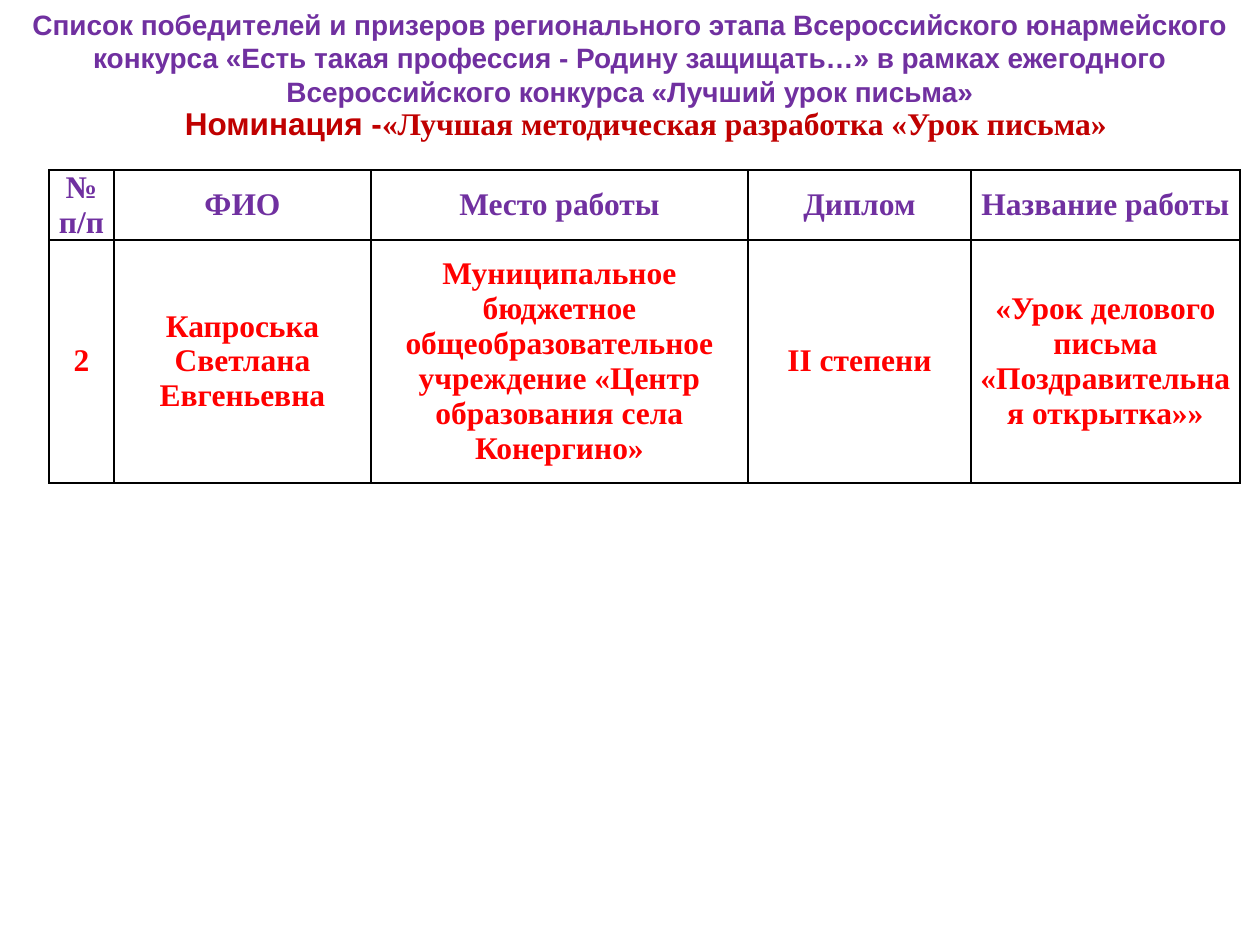
"""Builds a slide with the contest winners table and its headings."""
from dataclasses import dataclass

from lxml.etree import SubElement
from pptx import Presentation
from pptx.dml.color import RGBColor
from pptx.enum.shapes import MSO_SHAPE as Shape
from pptx.enum.text import MSO_ANCHOR as Anchor, MSO_AUTO_SIZE as AutoSize, PP_ALIGN as Align
from pptx.oxml.ns import qn
from pptx.util import Pt

PX = 914400 // 126


@dataclass(frozen=True)
class Theme:
    sans: str = "Arial"
    serif: str = "Times New Roman"
    purple: str = "7030A0"
    crimson: str = "C00000"
    red: str = "FF0000"
    white: str = "FFFFFF"
    black: str = "000000"
    title_size: int = 16
    body_size: int = 18


THEME = Theme()

SLIDE_SIZE = (1260, 945)
TITLE = (
    "Список победителей и призеров регионального этапа Всероссийского юнармейского "
    "конкурса «Есть такая профессия - Родину защищать…» в рамках ежегодного "
    "Всероссийского конкурса «Лучший урок письма»"
)
TITLE_BOX = (0, 0, 1260, 115)
NOMINATION = [
    ("Номинация -", THEME.sans),
    ("«Лучшая методическая разработка «Урок письма»", THEME.serif),
]
NOMINATION_BOX = (167, 98, 958, 50)
TABLE_ORIGIN = (49, 170)
COLUMN_WIDTHS = [65, 257, 377, 223, 269]
ROW_HEIGHTS = [60, 243]
CELL_MARGIN = 9
ROWS = [
    ["№\nп/п", "ФИО", "Место работы", "Диплом", "Название работы"],
    [
        "2",
        "Капроська Светлана Евгеньевна",
        "Муниципальное бюджетное общеобразовательное учреждение "
        "«Центр образования села Конергино»",
        "II степени",
        "«Урок делового письма «Поздравительная открытка»»",
    ],
]
ROW_COLORS = [THEME.purple, THEME.red]


def px(*values):
    return [value * PX for value in values]


def style_font(font, size, color, name):
    font.size = Pt(size)
    font.bold = True
    font.name = name
    font.color.rgb = RGBColor.from_string(color)


def add_title(slide):
    frame = slide.shapes.add_textbox(*px(*TITLE_BOX)).text_frame
    frame.word_wrap = True
    frame.auto_size = AutoSize.SHAPE_TO_FIT_TEXT
    frame.vertical_anchor = Anchor.MIDDLE
    paragraph = frame.paragraphs[0]
    paragraph.text = TITLE
    paragraph.alignment = Align.CENTER
    style_font(paragraph.font, THEME.title_size, THEME.purple, THEME.sans)


def add_nomination(slide):
    shape = slide.shapes.add_shape(Shape.RECTANGLE, *px(*NOMINATION_BOX))
    shape.shadow.inherit = False
    shape.fill.solid()
    shape.fill.fore_color.rgb = RGBColor.from_string(THEME.white)
    shape.line.fill.background()
    frame = shape.text_frame
    frame.word_wrap = False
    frame.auto_size = AutoSize.SHAPE_TO_FIT_TEXT
    frame.vertical_anchor = Anchor.MIDDLE
    paragraph = frame.paragraphs[0]
    paragraph.alignment = Align.CENTER
    for text, font_name in NOMINATION:
        run = paragraph.add_run()
        run.text = text
        style_font(run.font, THEME.body_size, THEME.crimson, font_name)


def add_borders(cell):
    properties = cell._tc.get_or_add_tcPr()
    for side in ("a:lnL", "a:lnR", "a:lnT", "a:lnB"):
        line = SubElement(properties, qn(side), w=str(Pt(1)))
        fill = SubElement(line, qn("a:solidFill"))
        SubElement(fill, qn("a:srgbClr"), val=THEME.black)


def fill_cell(cell, text, color):
    cell.margin_left = cell.margin_right = CELL_MARGIN * PX
    cell.margin_top = cell.margin_bottom = 0
    cell.vertical_anchor = Anchor.MIDDLE
    add_borders(cell)
    cell.fill.background()
    cell.text = text
    for paragraph in cell.text_frame.paragraphs:
        paragraph.alignment = Align.CENTER
        style_font(paragraph.font, THEME.body_size, color, THEME.serif)


def add_winners(slide):
    size = (sum(COLUMN_WIDTHS), sum(ROW_HEIGHTS))
    table = slide.shapes.add_table(
        len(ROWS), len(COLUMN_WIDTHS), *px(*TABLE_ORIGIN, *size)
    ).table
    table.first_row = table.horz_banding = False
    for column, width in zip(table.columns, COLUMN_WIDTHS):
        column.width = width * PX
    for row, height, texts, color in zip(table.rows, ROW_HEIGHTS, ROWS, ROW_COLORS):
        row.height = height * PX
        for cell, text in zip(row.cells, texts):
            fill_cell(cell, text, color)


def main():
    presentation = Presentation()
    presentation.slide_width, presentation.slide_height = px(*SLIDE_SIZE)
    slide = presentation.slides.add_slide(presentation.slide_layouts[6])
    add_winners(slide)
    add_nomination(slide)
    add_title(slide)
    presentation.save("out.pptx")


if __name__ == "__main__":
    main()
